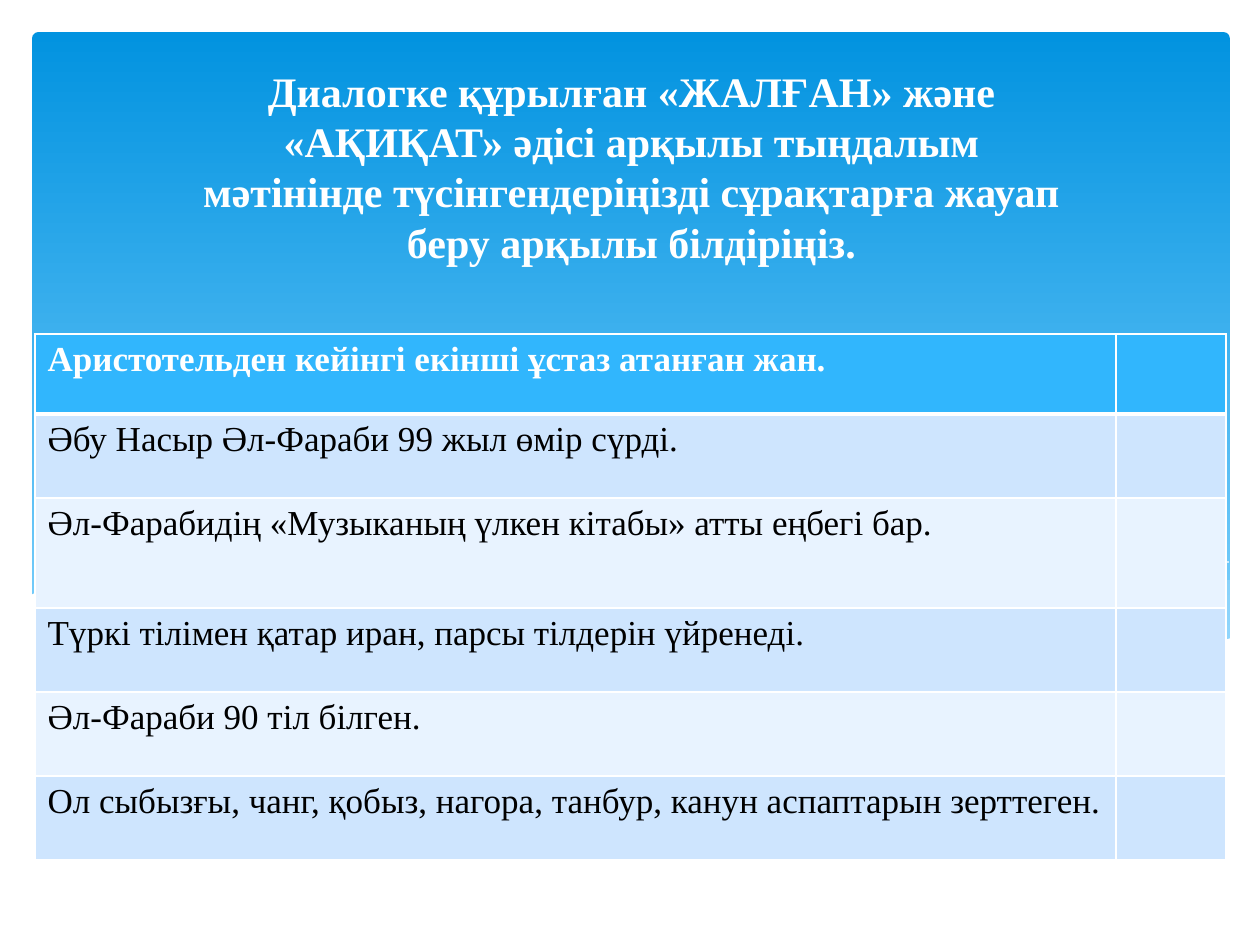
import pptx
import pptx.util
import pptx.dml.color
import pptx.enum.shapes
import pptx.enum.text
import pptx.oxml
import pptx.oxml.ns

PX = 7257  # EMU in one px, 126 px to the inch
FONT = "Times New Roman"
WHITE = "FFFFFF"


def paint(fill, color):
    fill.solid()
    fill.fore_color.rgb = pptx.dml.color.RGBColor.from_string(color)


def write_text(text_frame, text, size, color, bold=False, align=None):
    text_frame.word_wrap = True
    paragraph = text_frame.paragraphs[0]
    paragraph.text = text
    paragraph.alignment = align
    paragraph.space_before = pptx.util.Pt(0)
    paragraph.font.name = FONT
    paragraph.font.size = pptx.util.Pt(size)
    paragraph.font.bold = bold
    paint(paragraph.font.fill, color)


presentation = pptx.Presentation()
presentation.slide_width = 1260 * PX
presentation.slide_height = 945 * PX
slide = presentation.slides.add_slide(presentation.slide_layouts[2])
shapes = slide.shapes
title = shapes.title
title._element.getparent().remove(title._element)

# Blue panel
panel = shapes.add_shape(pptx.enum.shapes.MSO_SHAPE.ROUNDED_RECTANGLE,
                         32 * PX, 32 * PX, 1198 * PX, 653 * PX)
panel.adjustments[0] = 0.01
panel.shadow.inherit = False
panel.line.fill.background()
panel.fill.gradient()
panel.fill.gradient_angle = 270
for stop, color in zip(panel.fill.gradient_stops, ("0293E0", "83D3FE")):
    stop.color.rgb = pptx.dml.color.RGBColor.from_string(color)

# Waves: fill colour, opacity in percent, points; those without a fill are lines
waves = [
    ("C6E7FC", 29, [
        (1229, 580), (1170, 589), (1085, 609), (982, 634), (889, 652), (833, 662),
        (871, 669), (938, 675), (1012, 678), (1088, 675), (1153, 664), (1196, 651),
        (1230, 639), (1230, 580)]),
    ("C6E7FC", 40, [
        (1125, 672), (1017, 655), (890, 630), (793, 607), (717, 590), (648, 577),
        (586, 569), (529, 563), (455, 562), (394, 567), (360, 570), (431, 579),
        (509, 593), (566, 607), (668, 631), (757, 649), (838, 663), (909, 672),
        (989, 678), (1056, 678)]),
    (None, 100, [
        (389, 575), (433, 567), (505, 563), (591, 566), (671, 572), (766, 585),
        (876, 603), (1002, 632), (1143, 670)]),
    (None, 100, [
        (772, 651), (876, 625), (978, 601), (1091, 578), (1164, 567), (1229, 562)]),
    (WHITE, 100, [
        (1231, 638), (1172, 657), (1101, 671), (1019, 677), (914, 673), (816, 661),
        (699, 641), (599, 616), (494, 588), (398, 572), (315, 562), (243, 559),
        (184, 561), (134, 566), (96, 573), (66, 581), (45, 588), (29, 596),
        (29, 742), (1231, 742)]),
]
for color, opacity, points in waves:
    builder = shapes.build_freeform(*points[0], scale=PX)
    builder.add_line_segments(points[1:], close=color is not None)
    wave = builder.convert_to_shape()
    wave.shadow.inherit = False
    if color is None:
        wave.fill.background()
        paint(wave.line.fill, WHITE)
        wave.line.width = pptx.util.Pt(0)
        continue
    paint(wave.fill, color)
    wave.line.fill.background()
    if opacity < 100:
        color_element = wave._element.spPr.find(".//" + pptx.oxml.ns.qn("a:srgbClr"))
        color_element.append(pptx.oxml.parse_xml(
            f'<a:alpha {pptx.oxml.ns.nsdecls("a")} val="{opacity * 1000}"/>'))

# Heading, brought in front of the panel
heading = slide.placeholders[1]
shapes._spTree.append(heading._element)
heading.left, heading.top = 189 * PX, 45 * PX
heading.width, heading.height = 885 * PX, 228 * PX
heading.text_frame.vertical_anchor = pptx.enum.text.MSO_ANCHOR.BOTTOM
write_text(heading.text_frame,
           "Диалогке құрылған «ЖАЛҒАН» және «АҚИҚАТ» әдісі арқылы тыңдалым "
           "мәтінінде түсінгендеріңізді сұрақтарға жауап беру арқылы білдіріңіз.",
           size=24, color=WHITE, bold=True, align=pptx.enum.text.PP_ALIGN.CENTER)

# Table of statements with an empty answer column
statements = [
    ("Аристотельден кейінгі екінші ұстаз атанған жан.", 80),
    ("Әбу Насыр Әл-Фараби 99 жыл өмір сүрді.", 84),
    ("Әл-Фарабидің «Музыканың үлкен кітабы» атты еңбегі бар.", 110),
    ("Түркі тілімен қатар иран, парсы тілдерін үйренеді.", 84),
    ("Әл-Фараби 90 тіл білген.", 84),
    ("Ол сыбызғы, чанг, қобыз, нагора, танбур, канун аспаптарын зерттеген.", 84),
]
table = shapes.add_table(len(statements), 2, 35 * PX, 334 * PX, 1191 * PX, 526 * PX).table
table.columns[0].width = 1081 * PX
table.columns[1].width = 110 * PX
for row_index, (statement, height) in enumerate(statements):
    table.rows[row_index].height = height * PX
    header = row_index == 0
    row_color = "31B6FD" if header else ("E8F3FF", "CEE5FE")[row_index % 2]
    for column_index, text in enumerate((statement, "")):
        cell = table.cell(row_index, column_index)
        write_text(cell.text_frame, text, size=20, bold=header,
                   color=WHITE if header else "000000")
        paint(cell.fill, row_color)
        properties = cell._tc.get_or_add_tcPr()
        for position, side in enumerate("LRTB"):
            heavy = (header and side == "B") or (row_index == 1 and side == "T")
            width = pptx.util.Pt(3 if heavy else 1)
            properties.insert(position, pptx.oxml.parse_xml(
                f'<a:ln{side} {pptx.oxml.ns.nsdecls("a")} w="{width}"><a:solidFill>'
                f'<a:srgbClr val="{WHITE}"/></a:solidFill></a:ln{side}>'))

presentation.save("out.pptx")
